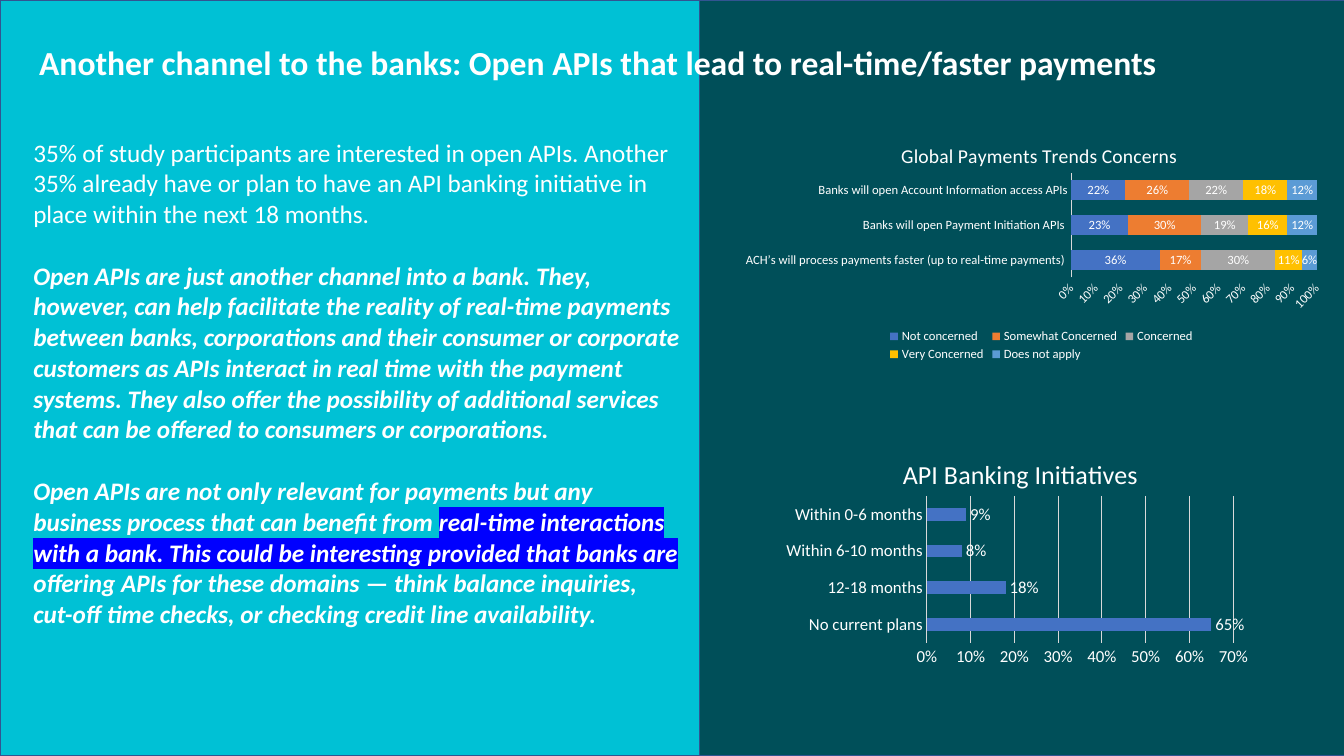
from dataclasses import dataclass

from lxml import etree
from pptx import Presentation
from pptx.chart.data import CategoryChartData
from pptx.dml.color import RGBColor
from pptx.enum.chart import XL_CHART_TYPE, XL_LABEL_POSITION, XL_LEGEND_POSITION, XL_TICK_MARK
from pptx.enum.shapes import MSO_SHAPE
from pptx.oxml.ns import qn
from pptx.util import Inches, Pt

CLUSTERED = XL_CHART_TYPE.BAR_CLUSTERED
STACKED = XL_CHART_TYPE.BAR_STACKED_100
LEGEND_BOTTOM = XL_LEGEND_POSITION.BOTTOM
OUTSIDE, CENTER = XL_LABEL_POSITION.OUTSIDE_END, XL_LABEL_POSITION.CENTER
NO_TICK = XL_TICK_MARK.NONE
RECT = MSO_SHAPE.RECTANGLE
NO_TABLE_STYLE = "{2D5ABB26-0587-4C30-8999-92F81FD0307C}"


@dataclass(frozen=True)
class Theme:
    font: str = "Calibri"
    text: str = "FFFFFF"
    left: str = "00C1D5"
    right: str = "004F59"
    border: str = "325491"
    rule: str = "D9D9D9"
    highlight: str = "0000FF"
    series: tuple = ("4472C4", "ED7D31", "A5A5A5", "FFC000", "5B9BD5")
    title_size: float = 24
    body_size: float = 18
    paragraph_gap: float = 22


def rgb(value):
    return RGBColor.from_string(value)


def place(parent, x, y, w=None, h=None):
    """Set a manual layout, in fractions of the chart, on a chart part."""
    for old in parent.findall(qn("c:layout")):
        parent.remove(old)
    layout = etree.Element(qn("c:layout"))
    manual = etree.SubElement(layout, qn("c:manualLayout"))
    values = [("xMode", "edge"), ("yMode", "edge"), ("x", x), ("y", y)]
    if w is not None:
        values += [("w", w), ("h", h)]
    if parent.tag == qn("c:plotArea"):
        values.insert(0, ("layoutTarget", "inner"))
    for name, value in values:
        etree.SubElement(manual, qn(f"c:{name}")).set("val", str(value))
    overlay = parent.find(qn("c:overlay"))
    if overlay is None:
        parent.insert(0, layout)
    else:
        overlay.addprevious(layout)


class SlideBuilder:
    def __init__(self, slide, theme):
        self.s = slide
        self.theme = theme

    def style(self, font, size, bold=False, italic=False):
        font.name = self.theme.font
        font.size = Pt(size)
        font.bold = bold
        font.italic = italic
        font.color.rgb = rgb(self.theme.text)

    def panel(self, x, y, w, h, color):
        sp = self.s.shapes.add_shape(RECT, Inches(x), Inches(y), Inches(w), Inches(h))
        sp.shadow.inherit = False
        sp.fill.solid()
        sp.fill.fore_color.rgb = rgb(color)
        sp.line.color.rgb = rgb(self.theme.border)
        sp.line.width = Pt(1)

    def heading(self, x, y, w, h, text):
        tf = self.s.shapes.add_textbox(Inches(x), Inches(y), Inches(w), Inches(h)).text_frame
        tf.word_wrap = True
        tf.text = text
        self.style(tf.paragraphs[0].runs[0].font, self.theme.title_size, bold=True)

    def text_table(self, x, y, w, h, paragraphs):
        """One-cell table; each run is (text, bold, italic, highlighted)."""
        table = self.s.shapes.add_table(1, 1, Inches(x), Inches(y), Inches(w), Inches(h)).table
        table.first_row = table.horz_banding = False
        table._tbl.tblPr.find(qn("a:tableStyleId")).text = NO_TABLE_STYLE
        cell = table.cell(0, 0)
        cell.fill.background()
        cell.margin_left = cell.margin_right = cell.margin_top = cell.margin_bottom = 0
        tf = cell.text_frame
        for i, runs in enumerate(paragraphs):
            p = tf.add_paragraph() if i else tf.paragraphs[0]
            if i:
                p.space_before = Pt(self.theme.paragraph_gap)
            for text, bold, italic, marked in runs:
                r = p.add_run()
                r.text = text
                self.style(r.font, self.theme.body_size, bold, italic)
                if marked:
                    mark = etree.Element(qn("a:highlight"))
                    etree.SubElement(mark, qn("a:srgbClr")).set("val", self.theme.highlight)
                    r.font._element.find(qn("a:solidFill")).addnext(mark)

    def bar_chart(self, kind, box, cats, series, title, title_size, size, gap,
                  title_at, plot_at, axis_max, legend_at=None):
        data = CategoryChartData(number_format="0%")
        data.categories = cats
        for name, values in series:
            data.add_series(name, values)
        chart = self.s.shapes.add_chart(kind, *map(Inches, box), data).chart
        self.style(chart.font, size)

        # Title, plot and legend positions
        chart.has_title = True
        tf = chart.chart_title.text_frame
        tf.text = title
        self.style(tf.paragraphs[0].runs[0].font, title_size)
        chart.chart_title.include_in_layout = False
        place(chart.chart_title._element, *title_at)
        place(chart._chartSpace.find(".//" + qn("c:plotArea")), *plot_at)
        chart.has_legend = legend_at is not None
        if legend_at:
            chart.legend.position = LEGEND_BOTTOM
            chart.legend.include_in_layout = False
            self.style(chart.legend.font, size)
            place(chart.legend._element, *legend_at)

        # Axes
        value_axis = chart.value_axis
        for axis in (chart.category_axis, value_axis):
            axis.major_tick_mark = axis.minor_tick_mark = NO_TICK
            self.style(axis.tick_labels.font, size)
        line = chart.category_axis.format.line
        line.color.rgb = rgb(self.theme.rule)
        line.width = Pt(0.75)
        value_axis.format.line.fill.background()
        value_axis.minimum_scale, value_axis.maximum_scale = 0, axis_max
        value_axis.major_unit = 0.1
        value_axis.tick_labels.number_format = "0%"
        value_axis.tick_labels.number_format_is_linked = False
        value_axis.has_major_gridlines = kind == CLUSTERED
        if kind == CLUSTERED:
            grid = value_axis.major_gridlines.format.line
            grid.color.rgb = rgb(self.theme.rule)
            grid.width = Pt(0.75)
        else:
            body = value_axis._element.find(qn("c:txPr")).find(qn("a:bodyPr"))
            body.set("rot", "-2700000")

        # Bars and their labels
        plot = chart.plots[0]
        plot.vary_by_categories = False
        plot.gap_width = gap
        if kind == STACKED:
            plot.overlap = 100
        for ser, color in zip(plot.series, self.theme.series):
            ser.format.fill.solid()
            ser.format.fill.fore_color.rgb = rgb(color)
            labels = ser.data_labels
            labels.show_value = True
            labels.number_format = "0%"
            labels.number_format_is_linked = False
            labels.position = OUTSIDE if kind == CLUSTERED else CENTER
            self.style(labels.font, size)


def main():
    prs = Presentation()
    prs.slide_width, prs.slide_height = Inches(13.33), Inches(7.5)
    theme = Theme()
    b = SlideBuilder(prs.slides.add_slide(prs.slide_layouts[6]), theme)

    # Background halves and heading
    b.panel(0, 0, 13.33, 7.5, theme.left)
    b.panel(6.94, 0, 6.47, 7.5, theme.right)
    b.heading(0.29, 0.37, 13.04, 0.5,
              "Another channel to the banks: Open APIs that lead to real-time/faster payments")

    # Commentary
    b.text_table(0.33, 1.37, 6.43, 5.35, [
        [("35% of study participants are interested in open APIs. Another 35% already have or plan "
          "to have an API banking initiative in place within the next 18 months.", False, False, False)],
        [("Open APIs are just another channel into a bank. They, however, can help facilitate the "
          "reality of real-time payments between banks, corporations and their consumer or corporate "
          "customers as APIs interact in real time with the payment systems. They also offer the "
          "possibility of additional services that can be offered to consumers or corporations.",
          True, True, False)],
        [("Open APIs are not only relevant for payments but any business process that can benefit from ",
          True, True, False),
         ("real-time interactions with a bank. This could be interesting provided that banks are ",
          True, True, True),
         ("offering APIs for these domains ", True, True, False),
         ("—", True, False, False),
         (" think balance inquiries, cut-off time checks, or checking credit line availability.",
          True, True, False)]])

    # Charts
    b.bar_chart(CLUSTERED, (7.72, 4.31, 4.75, 2.35),
                ["No current plans", "12-18 months", "Within 6-10 months", "Within 0-6 months"],
                [("Series 1", (0.65, 0.18, 0.08, 0.09))],
                "API Banking Initiatives", 18.6, 12, 182,
                (0.25, 0.07), (0.31, 0.26, 0.64, 0.62), 0.7)
    b.bar_chart(STACKED, (7.3, 1.21, 5.94, 2.41),
                ["ACH’s will process payments faster (up to real-time payments) ",
                 "Banks will open Payment Initiation APIs ",
                 "Banks will open Account Information access APIs"],
                [("Not concerned", (0.36, 0.23, 0.22)), ("Somewhat Concerned", (0.17, 0.3, 0.26)),
                 ("Concerned", (0.3, 0.19, 0.22)), ("Very Concerned", (0.11, 0.16, 0.18)),
                 ("Does not apply", (0.06, 0.12, 0.12))],
                "Global Payments Trends Concerns", 14, 9, 75,
                (0.27, 0.07), (0.56, 0.21, 0.41, 0.43), 1, (0.25, 0.84, 0.52, 0.16))
    prs.save("out.pptx")


if __name__ == "__main__":
    main()
